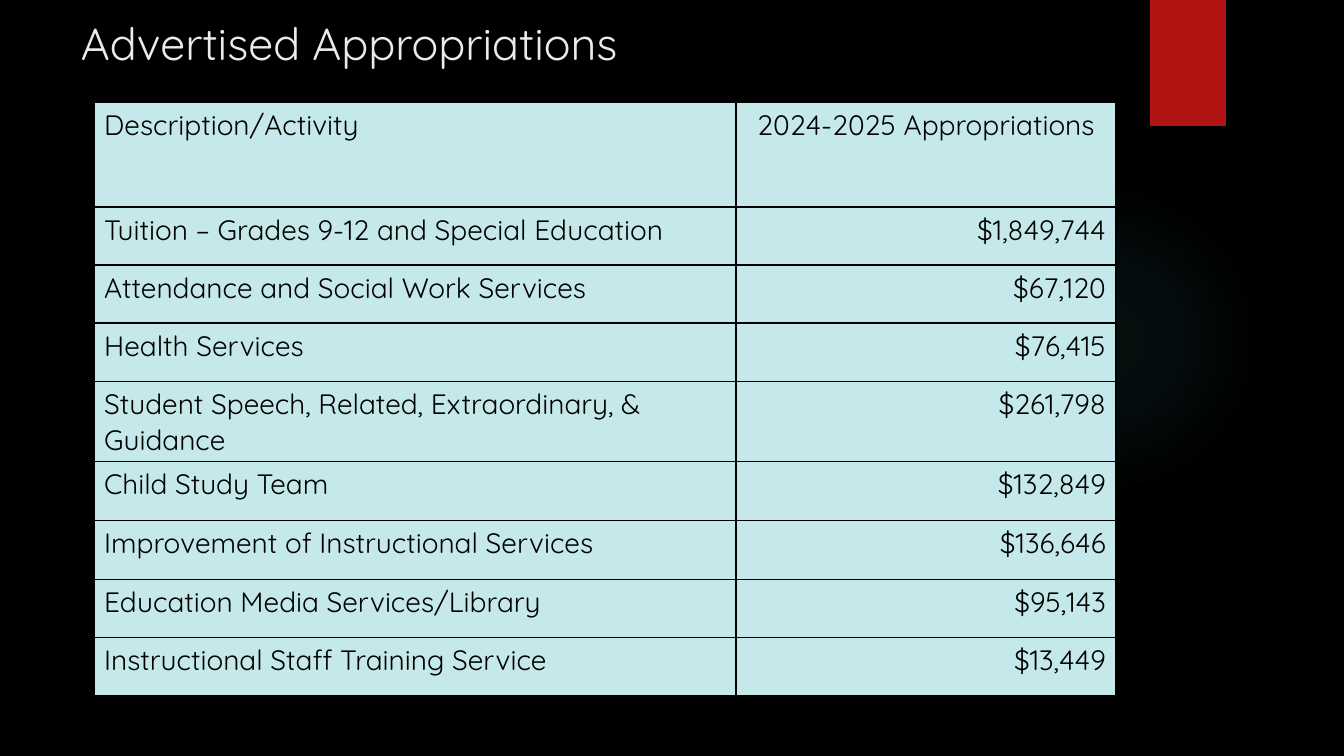
import pptx
import pptx.util
import pptx.oxml
import pptx.oxml.ns
import pptx.dml.color
import pptx.enum.shapes
import pptx.enum.text

SCALE = 914400 / 100.8
NS = pptx.oxml.ns.nsdecls("a")
KIND = pptx.enum.shapes.MSO_SHAPE
ALIGN = pptx.enum.text.PP_ALIGN


def px(*sizes):
    return [round(size * SCALE) for size in sizes]


def paint(target, color):
    if hasattr(target, "solid"):
        target.solid()
        target = target.fore_color
    target.rgb = pptx.dml.color.RGBColor.from_string(color)


deck = pptx.Presentation()
deck.slide_width, deck.slide_height = px(1344, 756)
slide = deck.slides.add_slide(deck.slide_layouts[6])
paint(slide.background.fill, "000000")

glow = slide.shapes.add_shape(KIND.OVAL, *px(949, 184, 310, 310))
glow.shadow.inherit = False
glow.line.fill.background()
glow.fill.background()
stops = "".join(
    f'<a:gs pos="{spot}000"><a:srgbClr val="50B9C1"><a:alpha val="{alpha}000"/></a:srgbClr></a:gs>'
    for spot, alpha in [(0, 7), (36, 6), (69, 0)]
)
blend = pptx.oxml.parse_xml(
    f'<a:gradFill {NS}><a:gsLst>{stops}</a:gsLst><a:path path="circle">'
    '<a:fillToRect l="50000" t="50000" r="50000" b="50000"/></a:path></a:gradFill>'
)
props = glow.element.spPr
props.replace(props.find(pptx.oxml.ns.qn("a:noFill")), blend)

flag = slide.shapes.add_shape(KIND.RECTANGLE, *px(1150, 0, 76, 126))
flag.shadow.inherit = False
flag.line.fill.background()
paint(flag.fill, "B01513")

title = slide.shapes.add_textbox(*px(71, 11, 1037, 154)).text_frame
title.word_wrap = True
run = title.paragraphs[0].add_run()
run.text = "Advertised Appropriations"
run.font.name = "Quicksand"
run.font.size = pptx.util.Pt(32)
paint(run.font.color, "EBEBEB")

rows = [
    ("Description/Activity", "2024-2025 Appropriations", 105),
    ("Tuition – Grades 9-12 and Special Education", "$1,849,744", 58),
    ("Attendance and Social Work Services", "$67,120", 58),
    ("Health Services", "$76,415", 59),
    ("Student Speech, Related, Extraordinary, & Guidance", "$261,798", 80),
    ("Child Study Team", "$132,849", 59),
    ("Improvement of Instructional Services", "$136,646", 59),
    ("Education Media Services/Library", "$95,143", 58),
    ("Instructional Staff Training Service", "$13,449", 58),
]
frame = slide.shapes.add_table(len(rows), 2, *px(94, 102, 1022, 594))
table = frame.table
for column, width in zip(table.columns, px(642, 380)):
    column.width = width

for index, (label, amount, height) in enumerate(rows):
    table.rows[index].height = px(height)[0]
    side = ALIGN.RIGHT if index else ALIGN.CENTER
    for place, (text, align) in enumerate([(label, ALIGN.LEFT), (amount, side)]):
        cell = table.cell(index, place)
        line = cell.text_frame.paragraphs[0]
        line.alignment = align
        run = line.add_run()
        run.text = text
        run.font.name = "Quicksand"
        run.font.size = pptx.util.Pt(20)
        run.font.bold = False
        paint(run.font.color, "000000")
        props = cell._tc.get_or_add_tcPr()
        for edge in ("lnL", "lnR", "lnT", "lnB"):
            props.append(pptx.oxml.parse_xml(
                f'<a:{edge} {NS} w="12700"><a:solidFill>'
                f'<a:srgbClr val="000000"/></a:solidFill></a:{edge}>'
            ))
        paint(cell.fill, "C5E8EA")

deck.save("out.pptx")
